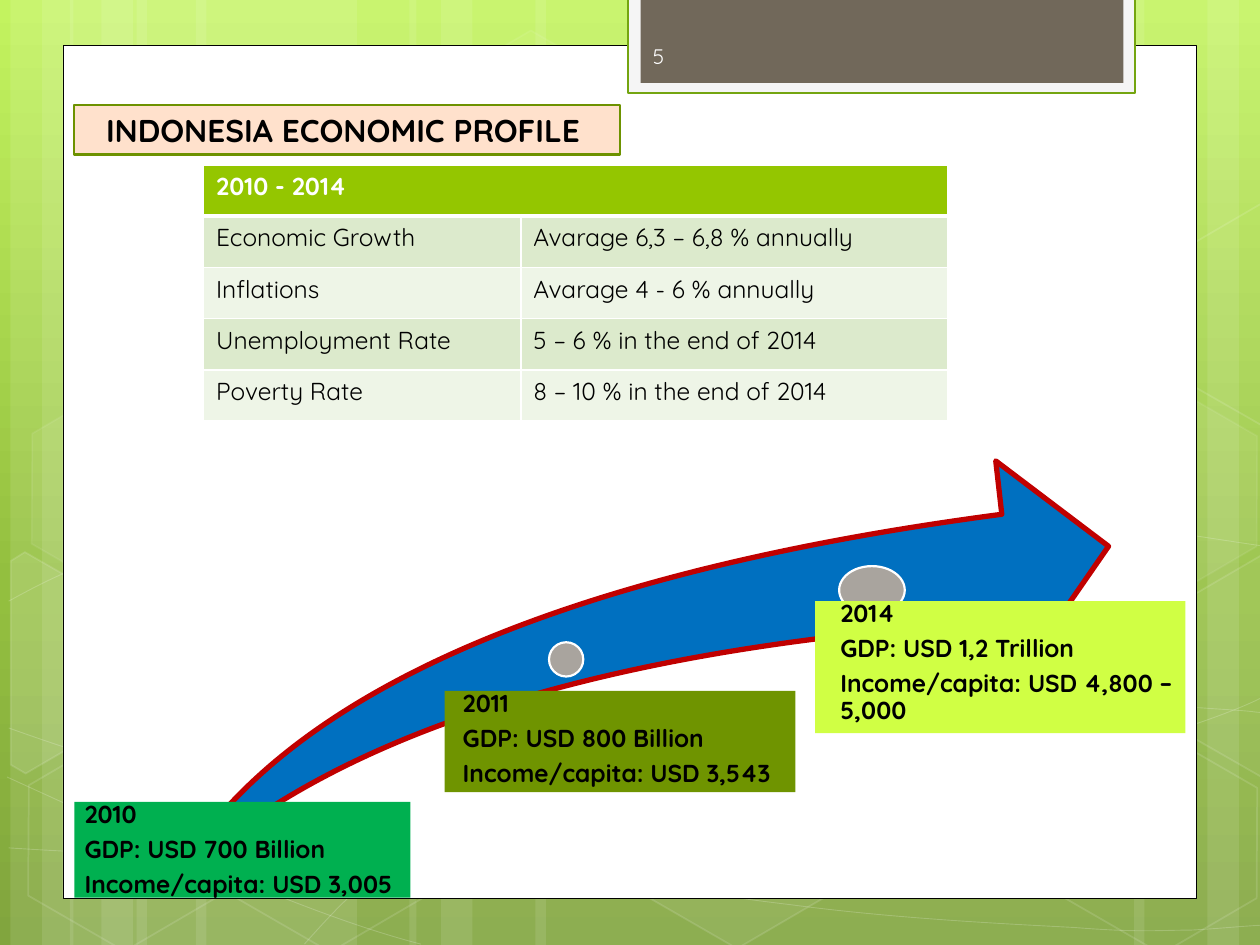
from copy import deepcopy
from math import cos, radians, sin
from typing import NamedTuple, Optional

from lxml.etree import SubElement as Sub
from pptx import Presentation
from pptx.dml.color import RGBColor as Rgb
from pptx.enum.shapes import MSO_SHAPE as Kind
from pptx.enum.text import MSO_ANCHOR as Anchor, PP_ALIGN as Align
from pptx.oxml.ns import qn
from pptx.util import Pt

FONT = "Quicksand"
WHITE = "FFFFFF"
BLACK = "000000"
TILT = 30


class Box(NamedTuple):
    x: float
    y: float
    w: float
    h: float


class Line(NamedTuple):
    hue: str
    width: float
    alpha: int = 100


class Hex(NamedTuple):
    x: float
    y: float
    fill: int
    line: int


class Card(NamedTuple):
    box: Box
    hue: str
    inset: float
    lines: tuple
    dot: Box
    tone: str = "A9A49E"


BARS = [(x + step, w) for step in (0, 34) for x, w in ((78, 126), (6, 36), (24, 60))]
BARS += [(528, 126), (690, 36), (648, 60), (306, 222), (234, 36), (252, 60)]

# Each curve: a start point, then two handles and an end point per arc
CURVES = [
    [(5, 484.5), (44, 487), (83, 489), (137, 488), (191, 487.5), (258, 486), (330, 479),
     (402, 471.5), (504, 458), (570, 444), (636, 430.5), (703.5, 409), (725, 396.5)],
    [(5, 343.5), (26, 332), (47, 321), (87, 310), (128, 299.5), (186.5, 283.5), (250, 278.5),
     (314, 273.5), (392, 273), (471, 278.5), (550, 284.5), (682.5, 306.5), (725, 312.5)],
    [(4, 444), (91.5, 484), (178, 523.5), (240.5, 539.5)],
    [(5, 416), (27.5, 424), (50.5, 432), (92, 443.5), (134, 454.5), (196.5, 472.5), (257, 484.5),
     (317, 497), (392.5, 510), (452, 517), (512, 525), (576, 528), (614, 530),
     (651.5, 533), (661.5, 531.5), (680.5, 531.5), (699, 530.5), (712, 529), (725, 528.5)],
    [(174, 539.5), (187, 525), (200, 510.5), (217.5, 497.5), (234.5, 484.5), (259, 470), (279.5, 460),
     (299.5, 450), (312, 445.5), (338.5, 438.5), (364.5, 431.5), (412.5, 421), (438, 416),
     (463.5, 411), (467.5, 411), (489.5, 409.5), (512, 407.5), (547, 405.5), (571.5, 404.5),
     (597, 404), (638, 404.5), (638, 404.5), (654, 404.5), (670, 404.5), (686, 404.5),
     (699, 405.5), (711.5, 406), (718, 407), (724.5, 407.5), (722, 407), (724.5, 407.5)],
]

HEXES = [
    Hex(240.5, 26, 4, 8), Hex(358, 424, 6, 12), Hex(8, 425.5, 0, 12),
    Hex(10, 224.5, 7, 8), Hex(125.5, 426, 0, 12), Hex(542, 326, 10, 12),
    Hex(600.5, 427, 0, 12), Hex(600.5, 226, 7, 8),
]
LEFT = [(6, 320.5), (14, 315.5), (69, 347), (68.5, 410.5), (14.5, 442), (6, 437)]
RIGHT = [(666.5, 349), (720.5, 317.5), (726.5, 321), (726.5, 441.5), (721.5, 444), (666.5, 412.5)]

CARDS = [
    Card(Box(42.5, 458.3, 192, 54.7), "00B050", 5.8,
         ("2010", "GDP: USD 700 Billion", "Income/capita: USD 3,005"),
         Box(150.5, 459.4, 10.8, 10.8), "544D43"),
    Card(Box(254, 394.8, 200.5, 57.8), "6F9400", 10.4,
         ("2011", "GDP: USD 800 Billion", "Income/capita: USD 3,543"),
         Box(313.7, 367, 19.6, 19.6)),
    Card(Box(465.8, 343.6, 211.7, 75.4), "D0FF44", 14.4,
         ("2014", "GDP: USD 1,2 Trillion", "Income/capita: USD 4,800 – 5,000"),
         Box(479.5, 323.5, 37.5, 27.4)),
]
ROWS = [
    ("2010 - 2014", ""),
    ("Economic Growth", "Avarage 6,3 – 6,8 % annually"),
    ("Inflations", "Avarage 4 - 6 % annually"),
    ("Unemployment Rate", "5 – 6 % in the end of 2014"),
    ("Poverty Rate", "8 – 10 % in the end of 2014"),
]


def put(thing, form: dict):
    """Set every attribute named in form."""
    for name, value in form.items():
        setattr(thing, name, value)


def tint(part, hue: str, alpha: int = 100):
    """Colour a fill or a line; alpha is opacity in percent."""
    fill = getattr(part, "fill", part)
    fill.solid()
    fill.fore_color.rgb = Rgb.from_string(hue)
    if alpha < 100:
        node = fill.fore_color._xFill.find(qn("a:srgbClr"))
        Sub(node, qn("a:alpha")).set("val", str(alpha * 1000))


def style(shape, hue: str, line: Optional[Line], alpha: int = 100):
    shape.shadow.inherit = False
    if alpha:
        tint(shape.fill, hue, alpha)
    else:
        shape.fill.background()
    if line:
        tint(shape.line, line.hue, line.alpha)
        shape.line.width = Pt(line.width)
    else:
        shape.line.fill.background()
    return shape


def draw(slide, box: Box, hue: str, line: Optional[Line] = None, kind=Kind.RECTANGLE, alpha: int = 100):
    return style(slide.shapes.add_shape(kind, *map(Pt, box)), hue, line, alpha)


def trace(slide, dots: list, line: Line, alpha: int = 0, close: bool = False):
    """Join the points by straight lines, with a white fill of the given opacity."""
    first, *rest = [(Pt(x), Pt(y)) for x, y in dots]
    pen = slide.shapes.build_freeform(*first)
    pen.add_line_segments(rest, close=close)
    return style(pen.convert_to_shape(), WHITE, line, alpha)


def bend(shape):
    """Turn each three line segments into one cubic arc."""
    steps = list(shape._element.iter(qn("a:lnTo")))
    for i in range(0, len(steps), 3):
        arc = Sub(steps[i].getparent(), qn("a:cubicBezTo"))
        for step in steps[i:i + 3]:
            arc.append(step[0])
            step.getparent().remove(step)


def turn(dots: list, mid: tuple) -> list:
    """Rotate points back by the tilt, so the tilted shape lands on them."""
    c, s = cos(radians(TILT)), sin(radians(TILT))
    gaps = [(x - mid[0], y - mid[1]) for x, y in dots]
    return [(mid[0] + x * c + y * s, mid[1] + y * c - x * s) for x, y in gaps]


def write(frame, lines: tuple, size: float, hue: str = BLACK, bold: bool = False, **form):
    """Fill a text frame; form holds paragraph settings."""
    for i, line in enumerate(lines):
        para = frame.add_paragraph() if i else frame.paragraphs[0]
        put(para, form)
        run = para.add_run()
        run.text = line
        put(run.font, {"name": FONT, "size": Pt(size), "bold": bold})
        run.font.color.rgb = Rgb.from_string(hue)


def edge(cell, low: float):
    """Give a cell white borders."""
    props = cell._tc.get_or_add_tcPr()
    for i, (side, width) in enumerate((("L", 1), ("R", 1), ("T", 1), ("B", low))):
        line = Sub(props, qn("a:ln" + side), w=str(Pt(width)))
        Sub(Sub(line, qn("a:solidFill")), qn("a:srgbClr"), val=WHITE)
        props.insert(i, line)


def shade(slide):
    """Lay the green gradient behind the slide."""
    fill = slide.background.fill
    fill.gradient()
    fill.gradient_angle = 270
    nodes = next(slide._element.iter(qn("a:gsLst")))
    nodes.insert(1, deepcopy(nodes[0]))
    for stop, (spot, hue) in zip(fill.gradient_stops, ((0, "C3F35F"), (0.62, "93BF3F"), (1, "81A53E"))):
        stop.position = spot
        stop.color.rgb = Rgb.from_string(hue)


def scene(slide):
    """Draw the bars, curves and hexagons of the backdrop."""
    for x, w in BARS:
        draw(slide, Box(x, 0, w, 540), WHITE, alpha=10)
    for dots in CURVES:
        bend(trace(slide, dots, Line(WHITE, 0.5, 20)))
    for item in HEXES:
        shape = draw(slide, Box(item.x, item.y, 126, 109.5), WHITE,
                     Line(WHITE, 1, item.line), Kind.HEXAGON, item.fill)
        shape.rotation = TILT
        shape.adjustments[0], shape.adjustments[1] = 0.285, 1.155
    high = [(x, y - 201) for x, y in RIGHT]
    for dots, mid, alpha in ((LEFT, (26, 385), 10), (RIGHT, (709, 374.5), 4), (high, (709, 173.5), 0)):
        trace(slide, turn(dots, mid), Line(WHITE, 1, 12), alpha, True).rotation = TILT


def grid(slide):
    """Add the table of targets."""
    table = slide.shapes.add_table(5, 2, Pt(116.3), Pt(94.2), Pt(425.5), Pt(146.5)).table
    for col, width in zip(table.columns, (181.3, 244.2)):
        col.width = Pt(width)
    for r, texts in enumerate(ROWS):
        table.rows[r].height = Pt(29.3)
        head = r == 0
        for c, text in enumerate(texts):
            cell = table.cell(r, c)
            tint(cell.fill, "94C600" if head else ("EEF5E7", "DCEACC")[r % 2])
            edge(cell, 3 if head else 1)
            if text:
                write(cell.text_frame, (text,), 14, WHITE if head else BLACK, head)
    table.cell(0, 0).merge(table.cell(0, 1))


def main():
    deck = Presentation()
    put(deck, {"slide_width": Pt(720), "slide_height": Pt(540)})
    slide = deck.slides.add_slide(deck.slide_layouts[6])
    shade(slide)
    scene(slide)
    draw(slide, Box(36, 26, 648, 487.2), WHITE, Line(BLACK, 0.5))
    draw(slide, Box(359, -1.4, 289.5, 54.7), "F5F5F5", Line("74A510", 1.25))
    draw(slide, Box(366, -1.4, 276, 48.8), "71685A")
    grid(slide)

    page = slide.shapes.add_textbox(*map(Pt, Box(366, 17.8, 105, 28.8))).text_frame
    put(page, {"word_wrap": True, "vertical_anchor": Anchor.MIDDLE})
    write(page, ("5",), 12, "FEFEFE")

    arrow = draw(slide, Box(96.5, 263.4, 537, 244), "0070C0", Line("C00000", 3), Kind.SWOOSH_ARROW)
    arrow.adjustments[0] = arrow.adjustments[1] = 0.25
    for card in CARDS:
        draw(slide, card.dot, card.tone, Line(WHITE, 1.25), Kind.OVAL)
        draw(slide, card.box, card.hue)
        frame = slide.shapes.add_textbox(*map(Pt, card.box)).text_frame
        put(frame, {"word_wrap": True, "margin_left": Pt(card.inset),
                    "margin_top": 0, "margin_right": 0, "margin_bottom": 0})
        write(frame, card.lines, 14, bold=True, line_spacing=0.9, space_after=Pt(4.9))

    title = draw(slide, Box(42.5, 60.1, 312, 28.3), "FFE1CC", Line("6D9200", 1.25)).text_frame
    put(title, {"word_wrap": True, "vertical_anchor": Anchor.MIDDLE})
    write(title, ("INDONESIA ECONOMIC PROFILE ",), 18, bold=True, alignment=Align.CENTER)
    deck.save("out.pptx")


if __name__ == "__main__":
    main()
